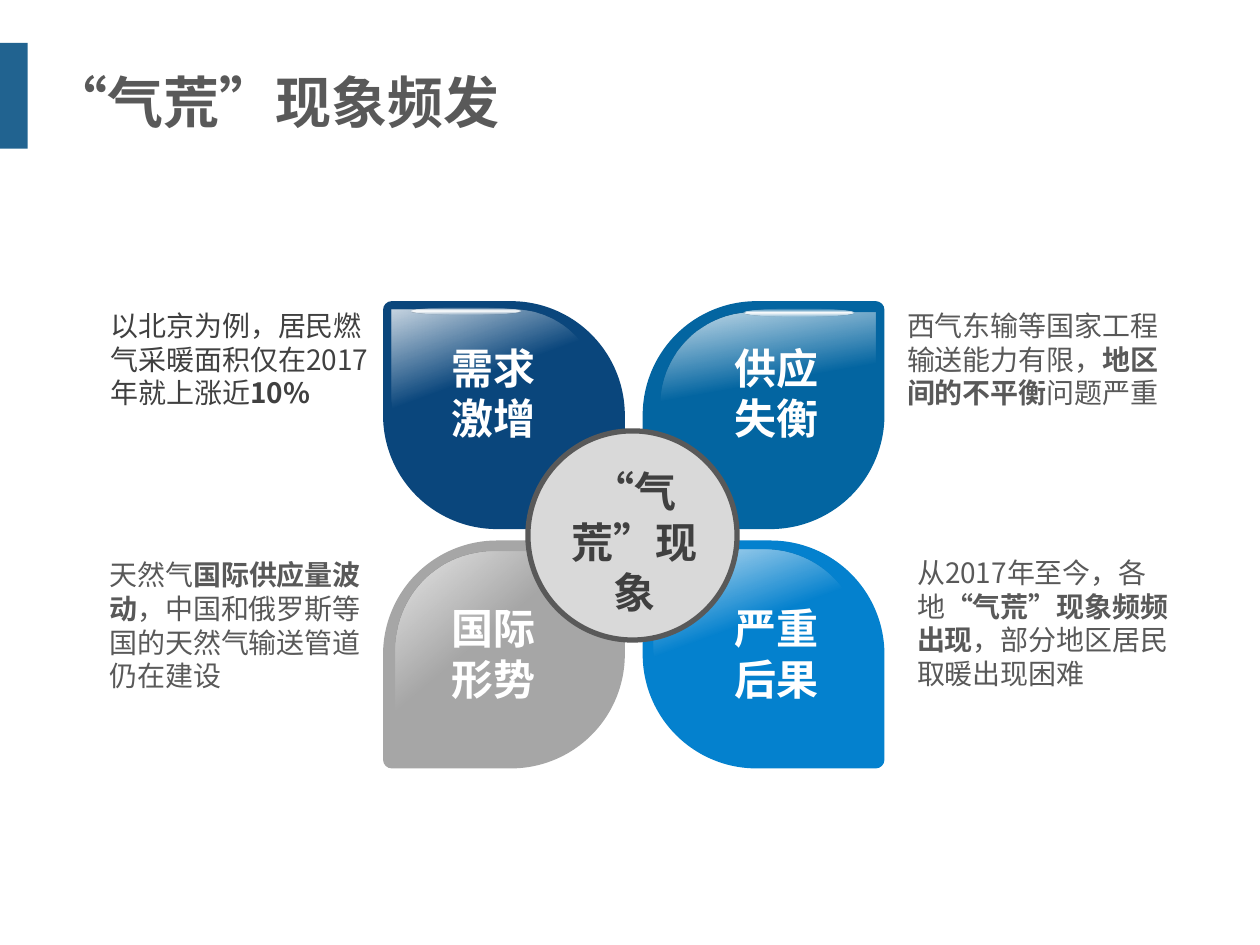
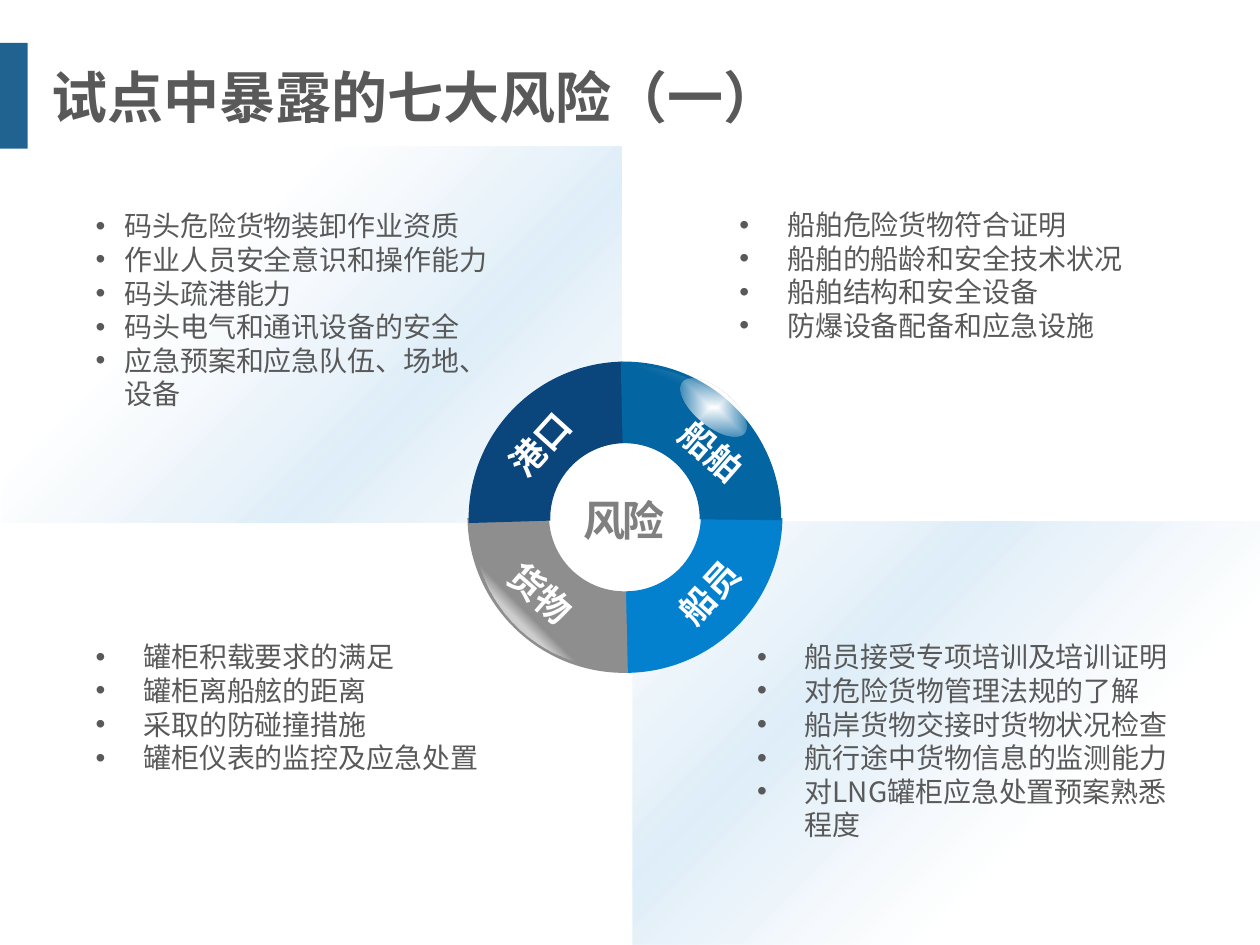
"""Build two slides on gas shortages and the risks exposed in the pilot."""
from lxml.etree import SubElement
from pptx import Presentation
from pptx.dml.color import RGBColor
from pptx.enum.shapes import MSO_SHAPE as SHAPE
from pptx.enum.text import MSO_ANCHOR as ANCHOR, PP_ALIGN as ALIGN
from pptx.oxml.ns import qn
from pptx.util import Inches, Pt

FONT = "Noto Sans CJK SC"
WHITE = RGBColor(0xFF, 0xFF, 0xFF)
BAND = RGBColor(0x09, 0x53, 0x85)
NAVY = RGBColor(0x0A, 0x46, 0x7C)
BLUE = RGBColor(0x03, 0x65, 0xA1)
BRIGHT = RGBColor(0x04, 0x81, 0xCE)
SILVER = RGBColor(0xA6, 0xA6, 0xA6)
STEEL = RGBColor(0x8E, 0x8E, 0x8E)
PALE = RGBColor(0xD9, 0xD9, 0xD9)
GREY = RGBColor(0x80, 0x80, 0x80)
TEXT = RGBColor(0x59, 0x59, 0x59)
DARK = RGBColor(0x40, 0x40, 0x40)
TINT = RGBColor(0x55, 0x8E, 0xD5)
TINT_MID = RGBColor(0x04, 0x7D, 0xC8)
GLINT = [(0, WHITE, 100), (100, WHITE, 0)]
CENTRE = (50, 50, 50, 50)


def draw(page, kind, place, fill, line=None, angle=None, focus=None, path="shape"):
    """Add a shape with a solid colour or a list of (position, colour, opacity) stops."""
    shape = page.shapes.add_shape(kind, *map(Inches, place))
    shape.shadow.inherit = False
    if line:
        shape.line.color.rgb, shape.line.width = line[0], Pt(line[1])
    else:
        shape.line.fill.background()
    if isinstance(fill, RGBColor):
        shape.fill.solid()
        shape.fill.fore_color.rgb = fill
        return shape
    shape.fill.background()
    empty = shape._element.spPr.find(qn("a:noFill"))
    gradient = empty.makeelement(qn("a:gradFill"), {"rotWithShape": "1"})
    empty.getparent().replace(empty, gradient)
    stops = SubElement(gradient, qn("a:gsLst"))
    for position, colour, opacity in fill:
        stop = SubElement(stops, qn("a:gs"), pos=str(position * 1000))
        tone = SubElement(stop, qn("a:srgbClr"), val=str(colour))
        SubElement(tone, qn("a:alpha"), val=str(opacity * 1000))
    if focus:
        route = SubElement(gradient, qn("a:path"), path=path)
        sides = {side: str(value * 1000) for side, value in zip("ltrb", focus)}
        SubElement(route, qn("a:fillToRect"), sides)
    else:
        SubElement(gradient, qn("a:lin"), ang=str(angle * 60000), scaled="0")
    return shape


def write(box, paras, size, colour, bold=False, align=ALIGN.LEFT, anchor=ANCHOR.TOP,
          indent=None, wrap=True):
    """Fill a box with paragraphs, each a list of runs; every second run flips the weight."""
    frame = box.text_frame
    frame.word_wrap = wrap
    frame.vertical_anchor = anchor
    for number, runs in enumerate(paras):
        para = frame.add_paragraph() if number else frame.paragraphs[0]
        para.alignment = align
        if indent:
            props = para._p.get_or_add_pPr()
            props.set("marL", str(Inches(indent)))
            props.set("indent", str(-Inches(indent)))
            SubElement(props, qn("a:buFont"), typeface="Arial")
            SubElement(props, qn("a:buChar"), char="•")
        for position, words in enumerate(runs):
            span = para.add_run()
            span.text = words
            span.font.size, span.font.name = Pt(size), FONT
            span.font.bold = bold != (position % 2 == 1)
            span.font.color.rgb = colour
            props = span._r.get_or_add_rPr()
            props.set("lang", "zh-CN")
            SubElement(props, qn("a:ea"), typeface=FONT)
    return box


deck = Presentation()
deck.slide_width, deck.slide_height = Inches(10), Inches(7.5)
pages = []
for heading, top in [("“气荒”现象频发", 0.38), ("试点中暴露的七大风险（一）", 0.34)]:
    page = deck.slides.add_slide(deck.slide_layouts[5])
    band = draw(page, SHAPE.RECTANGLE, (0, 0.34, 0.22, 0.84), BAND)
    tone = band._element.spPr.find(qn("a:solidFill"))[0]
    SubElement(tone, qn("a:alpha"), val="90000")
    title = page.shapes.title
    title.left, title.top, title.width, title.height = map(Inches, (0.31, top, 8.79, 0.84))
    write(title, [[heading]], 32, TEXT, True, anchor=ANCHOR.MIDDLE)
    pages.append(page)
shortage, risks = pages

petals = [
    (("国际", "形势"), SILVER, 3.11, 4.36, "HV", (3.14, 4.38, 1.66, 1.55), 74, 43, 230),
    (("严重", "后果"), BRIGHT, 5.17, 4.36, "V", (5.19, 4.36, 1.65, 1.54), 77, 40, 290),
    (("需求", "激增"), NAVY, 3.11, 2.46, "H", (3.11, 2.46, 1.65, 1.37), 77, 40, 110),
    (("供应", "失衡"), BLUE, 5.17, 2.46, "", (5.24, 2.48, 1.71, 1.47), 77, 40, 80),
]
for words, colour, left, top, flips, gloss_place, opacity, fade, angle in petals:
    petal = draw(shortage, SHAPE.ROUND_2_DIAG_RECTANGLE, (left, top, 1.78, 1.67),
                 colour, (colour, 10))
    gloss = draw(shortage, SHAPE.ROUND_2_DIAG_RECTANGLE, gloss_place,
                 [(0, WHITE, opacity), (fade, WHITE, 0)], angle=angle)
    for shape in (petal, gloss):
        shape.adjustments[0], shape.adjustments[1] = 0.5, 0
        for flip in flips:
            shape._element.spPr.xfrm.set("flip" + flip, "1")
    label_place = (3.12 if left < 5 else 5.36, 2.66 if top < 4 else 4.73, 1.6, 0.91)
    label = shortage.shapes.add_textbox(*map(Inches, label_place))
    write(label, [[word] for word in words], 24, WHITE, True, ALIGN.CENTER, ANCHOR.MIDDLE)
for left, top in [(3.26, 2.44), (5.9, 2.45)]:
    draw(shortage, SHAPE.OVAL, (left, top, 0.88, 0.06), GLINT, focus=CENTRE)

draw(shortage, SHAPE.OVAL, (4.19, 3.42, 1.66, 1.66), PALE, (TEXT, 3))
hub = shortage.shapes.add_textbox(*map(Inches, (4.33, 3.65, 1.41, 1.29)))
write(hub, [["“气荒”现象"]], 24, DARK, True, ALIGN.CENTER, ANCHOR.MIDDLE)

notes = [
    (0.78, 2.4, DARK, ["以北京为例，居民燃气采暖面积仅在2017年就上涨近", "10%"]),
    (7.1, 2.4, TEXT, ["西气东输等国家工程输送能力有限，", "地区间的不平衡", "问题严重"]),
    (0.77, 4.38, TEXT, ["天然气", "国际供应量波动",
                        "，中国和俄罗斯等国的天然气输送管道仍在建设"]),
    (7.18, 4.36, TEXT, ["从2017年至今，各地", "“气荒”现象频频出现",
                        "，部分地区居民取暖出现困难"]),
]
for left, top, colour, runs in notes:
    note = shortage.shapes.add_textbox(*map(Inches, (left, top, 2.35, 1.83)))
    write(note, [runs], 16, colour)

for place, turn in [((0.01, 1.16, 4.92, 2.99), 0), ((5.02, 4.14, 4.98, 3.36), 180)]:
    panel = draw(risks, SHAPE.RECTANGLE, place,
                 [(0, TINT, 0), (34, TINT_MID, 13), (67, TINT, 0)], angle=225)
    panel.rotation = turn

draw(risks, SHAPE.OVAL, (3.8, 2.95, 2.33, 2.33), WHITE, (PALE, 2))
arcs = [
    (3.72, 2.85, 209.5, 90.78, 144.18, BRIGHT),
    (3.71, 2.85, 301.1, 88.56, 142.95, STEEL),
    (3.72, 2.87, 30.7, 88.57, 142.95, NAVY),
    (3.71, 2.87, 122.4, 87.76, 142.95, BLUE),
]
for left, top, turn, start, end, colour in arcs:
    arc = draw(risks, SHAPE.BLOCK_ARC, (left, top, 2.49, 2.49), colour)
    arc.rotation = turn
    for index, value in enumerate((start, end, 0.26)):
        arc.adjustments[index] = value
draw(risks, SHAPE.OVAL, (3.76, 3.01, 2.29, 2.29), [(81, WHITE, 0), (84, WHITE, 56)],
     focus=(100, 0, 0, 100), path="circle")
sheen = draw(risks, SHAPE.OVAL, (4.32, 2.94, 1.73, 1.24),
             [(0, WHITE, 74), (28, WHITE, 0)], angle=90)
sheen.rotation = 22.6
glint = draw(risks, SHAPE.OVAL, (5.35, 3.09, 0.63, 0.29), GLINT, focus=CENTRE)
glint.rotation = 38.8

core = risks.shapes.add_textbox(*map(Inches, (4.26, 3.83, 1.38, 0.59)))
write(core, [["风险"]], 24, GREY, True, ALIGN.CENTER, ANCHOR.MIDDLE)
core.text_frame.paragraphs[0].runs[0]._r.get_or_add_rPr().set("spc", "-150")

ring_labels = [("港口", 3.91, 3.31, 312), ("船舶", 5.27, 3.36, 41),
               ("船员", 5.25, 4.48, 312), ("货物", 3.91, 4.49, 41)]
for word, left, top, turn in ring_labels:
    label = risks.shapes.add_textbox(*map(Inches, (left, top, 0.76, 0.44)))
    label.rotation = turn
    write(label, [[word]], 20, WHITE, True, ALIGN.CENTER, wrap=False)

risk_lists = [
    (0.66, 1.61, 0.23, ["码头危险货物装卸作业资质", "作业人员安全意识和操作能力", "码头疏港能力",
                        "码头电气和通讯设备的安全", "应急预案和应急队伍、场地、设备"]),
    (5.77, 1.6, 0.38, ["船舶危险货物符合证明", "船舶的船龄和安全技术状况",
                       "船舶结构和安全设备", "防爆设备配备和应急设施"]),
    (0.66, 5.03, 0.38, ["罐柜积载要求的满足", "罐柜离船舷的距离",
                        "采取的防碰撞措施", "罐柜仪表的监控及应急处置"]),
    (5.91, 5.03, 0.38, ["船员接受专项培训及培训证明", "对危险货物管理法规的了解",
                        "船岸货物交接时货物状况检查", "航行途中货物信息的监测能力",
                        "对LNG罐柜应急处置预案熟悉程度"]),
]
for left, top, indent, items in risk_lists:
    box = risks.shapes.add_textbox(*map(Inches, (left, top, 3.49, 2.4)))
    write(box, [[item] for item in items], 16, TEXT, indent=indent)

deck.save("out.pptx")
